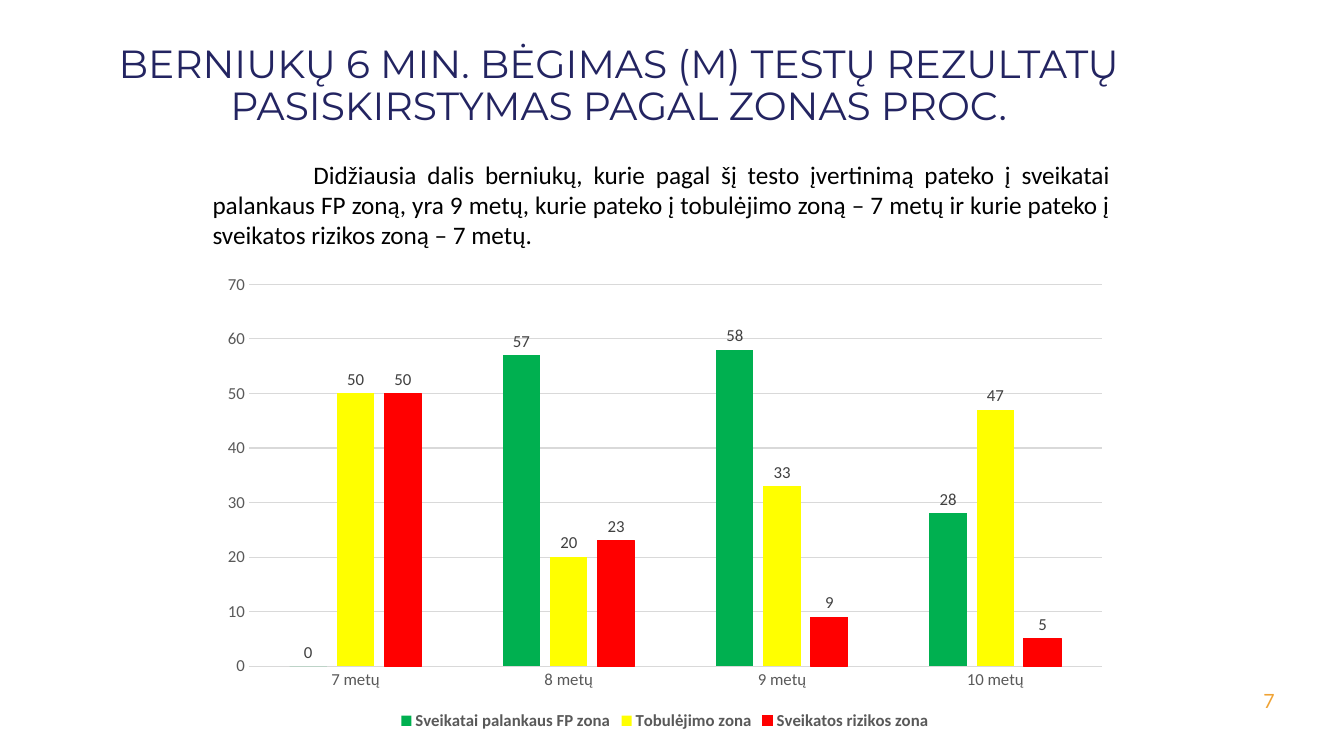
from pptx import Presentation
from pptx.chart.data import CategoryChartData
from pptx.dml.color import RGBColor
from pptx.enum.chart import (XL_CHART_TYPE, XL_LABEL_POSITION,
                             XL_LEGEND_POSITION, XL_TICK_MARK)
from pptx.enum.text import MSO_ANCHOR, PP_ALIGN
from pptx.util import Inches, Pt

COLUMNS = XL_CHART_TYPE.COLUMN_CLUSTERED
OUT_END = XL_LABEL_POSITION.OUTSIDE_END
BOTTOM = XL_LEGEND_POSITION.BOTTOM
NO_TICK = XL_TICK_MARK.NONE
TOP = MSO_ANCHOR.TOP
CENTER, RIGHT, JUSTIFY = PP_ALIGN.CENTER, PP_ALIGN.RIGHT, PP_ALIGN.JUSTIFY
GREY, RULE = "595959", "D9D9D9"


def style(font, size, color, name="Calibri", bold=False):
    font.size, font.name, font.bold = Pt(size), name, bold
    font.color.rgb = RGBColor.from_string(color)


def add_text(text, place, size, color, name, align, spacing=1.0, indent=0):
    box = slide.shapes.add_textbox(*map(Inches, place))
    frame = box.text_frame
    frame.word_wrap, frame.vertical_anchor = True, TOP
    para = frame.paragraphs[0]
    para.alignment, para.line_spacing = align, spacing
    if indent:
        props = para._p.get_or_add_pPr()
        props.set("marL", "0")
        props.set("indent", str(Inches(indent)))
    run = para.add_run()
    run.text = text
    style(run.font, size, color, name)


deck = Presentation()
deck.slide_width, deck.slide_height = Inches(13.33), Inches(7.5)
slide = deck.slides.add_slide(deck.slide_layouts[6])

add_text("7", (12.22, 6.79, 0.52, 0.4), 14, "F0A334", "Lato", RIGHT)
add_text("BERNIUKŲ 6 MIN. BĖGIMAS (M) TESTŲ REZULTATŲ "
         "PASISKIRSTYMAS PAGAL ZONAS PROC.",
         (0.72, 0.39, 10.83, 1.38), 28, "232461", "Montserrat", CENTER,
         spacing=0.9)

# Chart
zones = [
    ("Sveikatai palankaus FP zona", (0, 57, 58, 28), "00B050"),
    ("Tobulėjimo zona", (50, 20, 33, 47), "FFFF00"),
    ("Sveikatos rizikos zona", (50, 23, 9, 5), "FF0000"),
]
data = CategoryChartData(number_format="General")
data.categories = [f"{age} metų" for age in range(7, 11)]
for zone, values, color in zones:
    data.add_series(zone, values)
place = map(Inches, (2.08, 2.63, 9.03, 4.66))
chart = slide.shapes.add_chart(COLUMNS, *place, data).chart
style(chart.font, 10, "000000")
chart.has_title = False
chart.has_legend = True
chart.legend.position = BOTTOM
chart.legend.include_in_layout = False
style(chart.legend.font, 12, GREY, bold=True)

ages, scale = chart.category_axis, chart.value_axis
for axis in (ages, scale):
    axis.major_tick_mark = axis.minor_tick_mark = NO_TICK
    style(axis.tick_labels.font, 12, GREY)
scale.minimum_scale, scale.maximum_scale, scale.major_unit = 0, 70, 10
scale.has_major_gridlines = True
scale.format.line.fill.background()
for line in (ages.format.line, scale.major_gridlines.format.line):
    line.color.rgb = RGBColor.from_string(RULE)
    line.width = Pt(0.75)

plot = chart.plots[0]
plot.gap_width, plot.overlap = 219, -27
plot.vary_by_categories = False
for bars, (zone, values, color) in zip(plot.series, zones):
    bars.invert_if_negative = False
    bars.format.fill.solid()
    bars.format.fill.fore_color.rgb = RGBColor.from_string(color)
    labels = bars.data_labels
    labels.show_value, labels.position = True, OUT_END
    style(labels.font, 12, "404040")
edge = plot.series[2].format.line
edge.color.rgb = RGBColor.from_string("FF0000")
edge.width = Pt(0.75)

add_text("Didžiausia dalis berniukų, kurie pagal šį testo įvertinimą pateko "
         "į sveikatai palankaus FP zoną, yra 9 metų, kurie pateko į "
         "tobulėjimo zoną – 7 metų ir kurie pateko į sveikatos rizikos "
         "zoną – 7 metų.",
         (2.01, 1.53, 9.1, 1.01), 18, "000000", "Calibri", JUSTIFY, indent=1)

deck.save("out.pptx")
